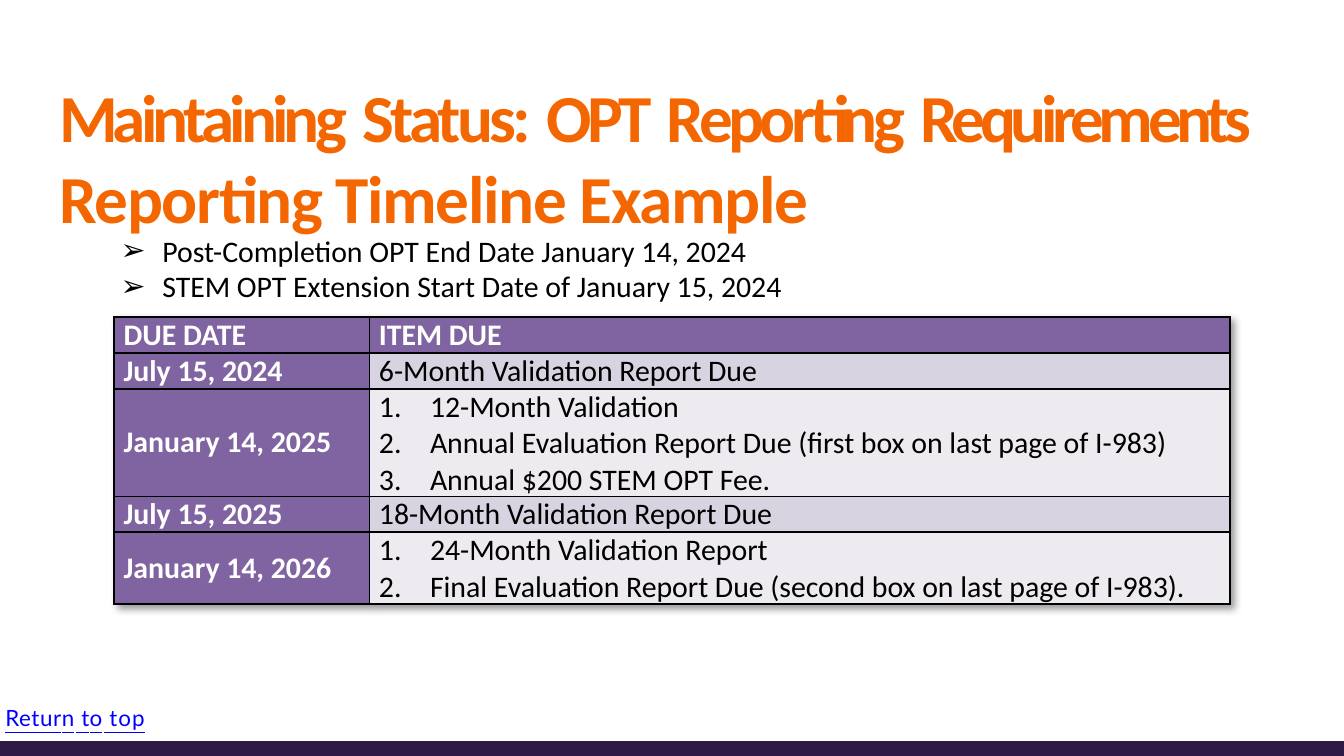
from lxml import etree
from pptx import Presentation
from pptx.dml.color import RGBColor
from pptx.enum.shapes import MSO_SHAPE
from pptx.enum.text import MSO_ANCHOR, MSO_AUTO_SIZE
from pptx.oxml.ns import qn
from pptx.util import Inches, Pt

RECT = MSO_SHAPE.RECTANGLE
MIDDLE = MSO_ANCHOR.MIDDLE
GROW = MSO_AUTO_SIZE.SHAPE_TO_FIT_TEXT

WIDE = 10
HIGH = WIDE * 9 / 16
COLORS = {
    "bar": "2E1A47", "title": "F46600", "link": "0000FF", "head": "8064A2",
    "odd": "D8D3E0", "even": "EDEAF0", "text": "000000", "white": "FFFFFF",
}
BODY = {"name": "Calibri", "size": Pt(16)}
HEAD = {**BODY, "bold": True}
TITLE = {"name": "Calibri", "size": Pt(36), "bold": True}
LINK = {"name": "Lato", "size": Pt(12), "underline": True}

# Text with letter spacing in points
TITLE_RUNS = [
    ("Maintaining", -2.6), (" ", 0), ("Status:", -2), (" ", -0.4),
    ("OPT", -2.5), (" ", 0), ("Reporting", -2.4), (" ", -0.3),
    ("Requirements", -2.9), (" ", 0), ("Reporting Timeline Example", -0.7),
]
LINK_RUNS = [("Retur", 0.3), ("n", 0.7), (" ", -0.7), ("t", 0.1),
             ("o", 0.7), (" ", -0.7), ("top", 0.6)]
DATES = ["Post-Completion OPT End Date January 14, 2024",
         "STEM OPT Extension Start Date of January 15, 2024"]
ROWS = [
    ("DUE DATE", ["ITEM DUE"]),
    ("July 15, 2024", ["6-Month Validation Report Due"]),
    ("January 14, 2025", [
        "12-Month Validation",
        "Annual Evaluation Report Due (first box on last page of I-983)",
        "Annual $200 STEM OPT Fee."]),
    ("July 15, 2025", ["18-Month Validation Report Due"]),
    ("January 14, 2026", [
        "24-Month Validation Report",
        "Final Evaluation Report Due (second box on last page of I-983)."]),
]


def color(key):
    return RGBColor.from_string(COLORS[key])


def style(font, fmt, key):
    for name, value in fmt.items():
        setattr(font, name, value)
    font.color.rgb = color(key)


def add_bullet(para, indent, tag, **attrs):
    props = para._p.get_or_add_pPr()
    props.set("marL", str(Inches(indent)))
    props.set("indent", str(-Inches(indent)))
    if tag == "a:buChar":
        etree.SubElement(props, qn("a:buFont"), typeface="Arial")
    etree.SubElement(props, qn(tag), **attrs)


def fill_lines(frame, lines, fmt, key, bullet=None):
    for i, line in enumerate(lines):
        para = frame.paragraphs[0] if i == 0 else frame.add_paragraph()
        if bullet:
            add_bullet(para, **bullet)
        run = para.add_run()
        run.text = line
        style(run.font, fmt, key)


def add_frame(slide, box):
    frame = slide.shapes.add_textbox(*map(Inches, box)).text_frame
    frame.word_wrap = True
    frame.auto_size = GROW
    return frame


def add_spaced(slide, box, runs, fmt, key):
    frame = add_frame(slide, box)
    frame.margin_right = frame.margin_bottom = 0
    frame.margin_left = frame.margin_top = Inches(0.01)
    for text, gap in runs:
        run = frame.paragraphs[0].add_run()
        run.text = text
        style(run.font, fmt, key)
        run.font._element.set("spc", str(round(gap * 100)))


def add_bar(slide, box):
    bar = slide.shapes.add_shape(RECT, *map(Inches, box))
    bar.shadow.inherit = False
    bar.fill.solid()
    bar.fill.fore_color.rgb = color("bar")
    bar.line.fill.background()


def add_dates(slide, box):
    bullet = {"indent": 0.31, "tag": "a:buChar", "char": "➢"}
    fill_lines(add_frame(slide, box), DATES, BODY, "text", bullet)


def add_solid(parent, key):
    fill = etree.SubElement(parent, qn("a:solidFill"))
    etree.SubElement(fill, qn("a:srgbClr"), val=COLORS[key])


def fill_cell(cell, lines, fmt, key, back):
    cell.margin_left = cell.margin_right = Inches(0.07)
    cell.margin_top = cell.margin_bottom = 0
    cell.vertical_anchor = MIDDLE
    numbers = {"indent": 0.38, "tag": "a:buAutoNum", "type": "arabicPeriod"}
    fill_lines(cell.text_frame, lines, fmt, key,
               numbers if len(lines) > 1 else None)
    # Borders come before the fill in the cell properties
    props = cell._tc.get_or_add_tcPr()
    for side in ("a:lnL", "a:lnR", "a:lnT", "a:lnB"):
        add_solid(etree.SubElement(props, qn(side), w=str(Pt(1))), "text")
    cell.fill.solid()
    cell.fill.fore_color.rgb = color(back)


def add_shadow(table):
    effects = etree.Element(qn("a:effectLst"))
    shadow = etree.SubElement(effects, qn("a:outerShdw"), blurRad=str(Pt(4)),
                              dist=str(Pt(3)), dir="2700000", algn="tl")
    tint = etree.SubElement(shadow, qn("a:srgbClr"), val=COLORS["text"])
    etree.SubElement(tint, qn("a:alpha"), val="40000")
    table._tbl.tblPr.insert(0, effects)


def add_timeline(slide, box):
    width, height = box[2:]
    table = slide.shapes.add_table(len(ROWS), 2, *map(Inches, box)).table
    first = 1.9
    table.columns[0].width = Inches(first)
    table.columns[1].width = Inches(width - first)
    unit = height / sum(len(items) for _, items in ROWS)
    for i, (date, items) in enumerate(ROWS):
        table.rows[i].height = Inches(unit * len(items))
        fill_cell(table.cell(i, 0), [date], HEAD, "white", "head")
        if i == 0:
            look = (HEAD, "white", "head")
        else:
            look = ({**BODY, "bold": False}, "text", "odd" if i % 2 else "even")
        fill_cell(table.cell(i, 1), items, *look)
    add_shadow(table)


def main():
    prs = Presentation()
    prs.slide_width, prs.slide_height = Inches(WIDE), Inches(HIGH)
    slide = prs.slides.add_slide(prs.slide_layouts[6])
    add_bar(slide, (0, HIGH - 0.11, WIDE, 0.11))
    add_spaced(slide, (0.43, 0.55, 8.91, 1.23), TITLE_RUNS, TITLE, "title")
    add_spaced(slide, (0.03, 5.23, 1.06, 0.22), LINK_RUNS, LINK, "link")
    add_timeline(slide, (0.85, 2.36, 8.3, 2.13))
    add_dates(slide, (0.8, 1.68, 8.4, 0.64))
    prs.save("out.pptx")


if __name__ == "__main__":
    main()
